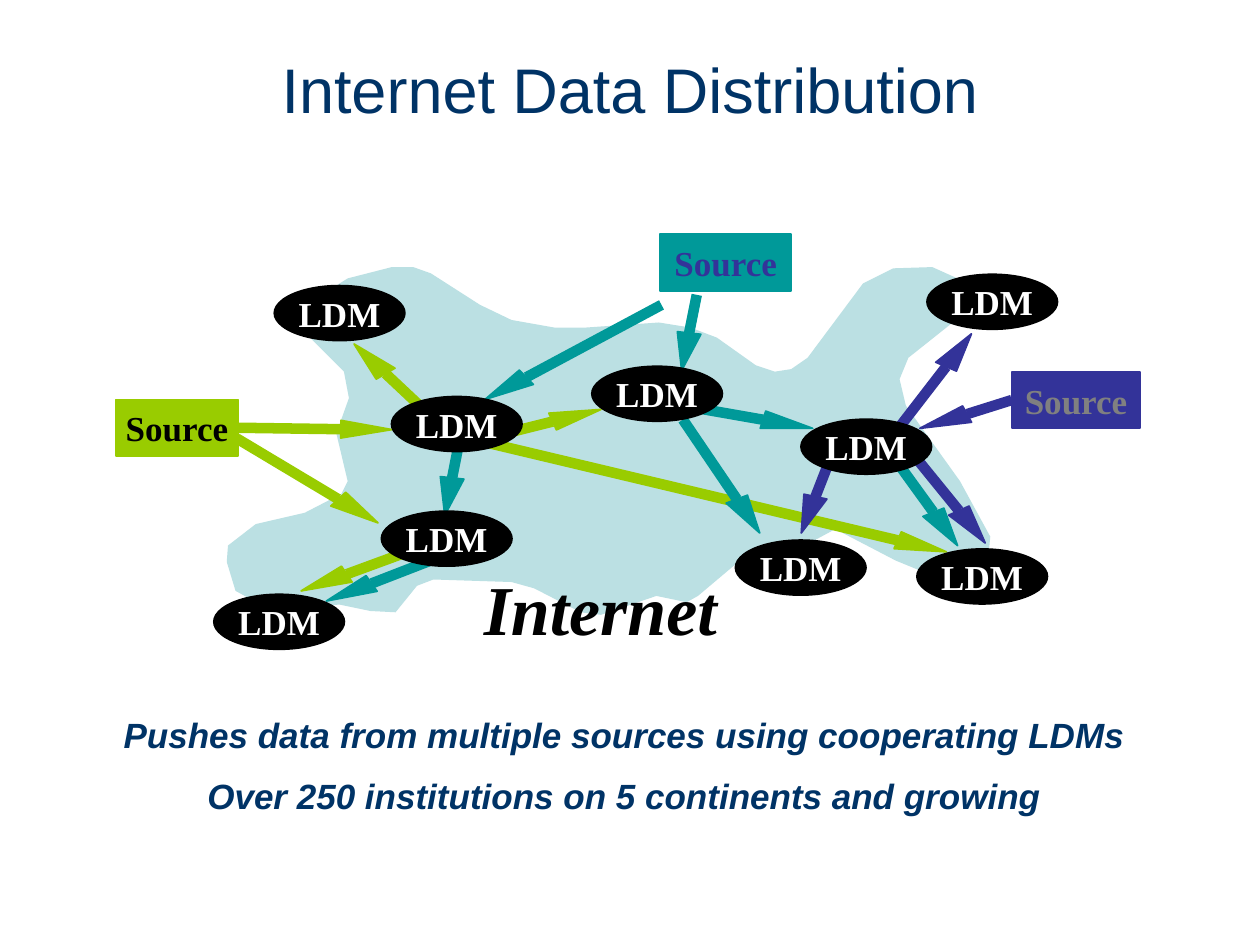
import math

import pptx
import pptx.dml.color
import pptx.enum.shapes
import pptx.enum.text
import pptx.oxml
import pptx.util

Inches = pptx.util.Inches
Pt = pptx.util.Pt
SERIF, SANS = "Times New Roman", "Arial"
COLORS = {
    "navy": "003366", "cloud": "BBE0E3", "green": "99CC00", "teal": "009999",
    "purple": "333399", "gray": "808080", "black": "000000", "white": "FFFFFF",
}

TITLE = "Internet Data Distribution"
CLAIMS = [
    "Pushes data from multiple sources using cooperating LDMs",
    "Over 250 institutions on 5 continents and growing",
]

CLOUD = [
    (1.8, 4.46), (1.81, 4.33), (2.03, 4.16), (2.42, 4.07), (2.71, 3.92), (2.76, 3.82),
    (2.67, 3.44), (2.77, 3.16), (2.73, 2.95), (2.46, 2.68), (2.52, 2.36), (2.76, 2.21),
    (3.11, 2.12), (3.28, 2.12), (3.42, 2.17), (3.81, 2.42), (4.06, 2.54), (4.4, 2.6),
    (4.65, 2.6), (5.23, 2.56), (5.48, 2.6), (5.69, 2.68), (6, 2.9), (6.15, 2.95),
    (6.28, 2.93), (6.41, 2.84), (6.85, 2.25), (7.09, 2.13), (7.4, 2.12), (7.71, 2.26),
    (7.55, 2.57), (7.21, 2.84), (7.14, 3.01), (7.19, 3.22), (7.62, 3.82), (7.86, 4.26),
    (7.83, 4.57), (7.55, 4.63), (7.11, 4.45), (6.63, 4.2), (6.37, 4.34), (5.92, 4.41),
    (5.54, 4.73), (5.45, 4.78), (5.21, 4.73), (4.77, 4.88), (4.61, 4.86), (4.24, 4.67),
    (4.06, 4.62), (3.44, 4.6), (3.31, 4.65), (3.14, 4.86), (2.94, 4.85), (2.7, 4.8),
    (2.09, 4.81), (1.87, 4.69),
]

# fill: (left, top, width, text colour)
SOURCES = {
    "green": (0.92, 3.17, 0.97, "black"),
    "purple": (8.03, 2.95, 1.02, "gray"),
    "teal": (5.24, 1.86, 1.04, "purple"),
}
LDMS = [
    (2.17, 2.26), (6.35, 3.32), (3.1, 3.14), (3.02, 4.05), (4.69, 2.9),
    (7.27, 4.35), (7.35, 2.17), (1.69, 4.71), (5.83, 4.28),
]
NODE_HEIGHT, LDM_WIDTH = 0.45, 1.05

# start, tip; a start on a source's side names the connection site as well
LEFT_SIDE, RIGHT_SIDE = 1, 3
FEEDS = {
    "green": [
        ((1.89, 3.4), (3.11, 3.41), RIGHT_SIDE),
        ((1.88, 3.48), (3, 4.15)),
        ((3.48, 3.36), (2.81, 2.73)),
        ((3.37, 4.33), (2.39, 4.69)),
        ((3.85, 3.51), (7.51, 4.38)),
        ((3.85, 3.48), (4.77, 3.25)),
    ],
    "teal": [
        ((5.25, 2.42), (3.85, 3.17)),
        ((3.65, 3.48), (3.53, 4.09)),
        ((3.57, 4.39), (2.59, 4.77)),
        ((5.53, 2.34), (5.41, 2.94)),
        ((5.42, 3.33), (6.03, 4.23)),
        ((5.42, 3.22), (6.45, 3.4)),
        ((7.1, 3.64), (7.6, 4.33)),
    ],
    "purple": [
        ((8.03, 3.18), (7.3, 3.4), LEFT_SIDE),
        ((6.59, 3.64), (6.36, 4.23)),
        ((7.1, 3.44), (7.71, 2.65)),
        ((7.21, 3.56), (7.82, 4.31)),
    ],
}
HEAD_LENGTH, HEAD_HALF_WIDTH, STRETCH = 0.3, 0.07, 1.35


def rgb(name):
    return pptx.dml.color.RGBColor.from_string(COLORS[name])


def paint(shape, fill, outlined):
    shape.shadow.inherit = False
    shape.fill.solid()
    shape.fill.fore_color.rgb = rgb(fill)
    if outlined:
        shape.line.color.rgb = rgb(fill)
        shape.line.width = Pt(1)
    else:
        shape.line.fill.background()


def write(frame, lines, size, color, face, bold=True, italic=False):
    for index, line in enumerate(lines):
        paragraph = frame.add_paragraph() if index else frame.paragraphs[0]
        paragraph.text = line
        paragraph.alignment = pptx.enum.text.PP_ALIGN.CENTER
        if index:
            paragraph.space_before = Pt(11)
        font = paragraph.font
        font.size, font.name, font.bold, font.italic = Pt(size), face, bold, italic
        font.color.rgb = rgb(color)


def add_polygon(shapes, points, fill, outlined):
    corners = [(Inches(x), Inches(y)) for x, y in points]
    builder = shapes.build_freeform(*corners[0])
    builder.add_line_segments(corners[1:], close=True)
    paint(builder.convert_to_shape(), fill, outlined)


def add_node(shapes, kind, box, label, fill, color, outlined):
    node = shapes.add_shape(kind, *map(Inches, box))
    paint(node, fill, outlined)
    node.text_frame.word_wrap = False
    node.text_frame.vertical_anchor = pptx.enum.text.MSO_ANCHOR.MIDDLE
    write(node.text_frame, [label], 20, color, SERIF)
    return node


def head_geometry(start, tip):
    """Return the base centre and two wings of a head stretched sideways."""
    dx, dy = (start[0] - tip[0]) / STRETCH, start[1] - tip[1]
    length = math.hypot(dx, dy)
    ux, uy = dx / length, dy / length
    base = (tip[0] + HEAD_LENGTH * ux * STRETCH, tip[1] + HEAD_LENGTH * uy)
    wings = [(base[0] - half * uy * STRETCH, base[1] + half * ux)
             for half in (HEAD_HALF_WIDTH, -HEAD_HALF_WIDTH)]
    return base, wings


def add_feed(shapes, color, source, start, tip, side=None):
    group = shapes.add_group_shape().shapes
    base, wings = head_geometry(start, tip)
    shaft = group.add_connector(
        pptx.enum.shapes.MSO_CONNECTOR.STRAIGHT, *map(Inches, (*start, *base)))
    if side is not None:
        shaft.begin_connect(source, side)
    shaft.line.color.rgb = rgb(color)
    shaft.line.width = Pt(6)
    shaft._element.spPr.append(pptx.oxml.parse_xml(
        '<a:effectLst xmlns:a="http://schemas.openxmlformats.org/drawingml/2006/main"/>'))
    add_polygon(group, [tip, *wings], color, True)


def add_text(shapes, box, lines, size, color, face):
    frame = shapes.add_textbox(*map(Inches, box)).text_frame
    frame.word_wrap = True
    write(frame, lines, size, color, face, italic=True)


def main():
    deck = pptx.Presentation()
    deck.slide_width, deck.slide_height = Inches(10), Inches(7.5)
    slide = deck.slides.add_slide(deck.slide_layouts[5])
    shapes = slide.shapes
    kinds = pptx.enum.shapes.MSO_SHAPE

    title = shapes.title
    title.left, title.top, title.width, title.height = map(Inches, (0.75, 0.08, 8.5, 1.25))
    title.text_frame.vertical_anchor = pptx.enum.text.MSO_ANCHOR.MIDDLE
    write(title.text_frame, [TITLE], 36, "navy", SANS, bold=False)

    add_polygon(shapes, CLOUD, "cloud", False)
    sources = {
        fill: add_node(shapes, kinds.RECTANGLE, (left, top, width, NODE_HEIGHT),
                       "Source", fill, color, True)
        for fill, (left, top, width, color) in SOURCES.items()
    }
    for color, feeds in FEEDS.items():
        for feed in feeds:
            add_feed(shapes, color, sources[color], *feed)
    add_text(shapes, (3.6, 4.44, 2.33, 0.76), ["Internet"], 40, "black", SERIF)
    for left, top in LDMS:
        add_node(shapes, kinds.OVAL, (left, top, LDM_WIDTH, NODE_HEIGHT),
                 "LDM", "black", "white", False)
    add_text(shapes, (0.49, 5.61, 8.93, 0.93), CLAIMS, 20, "navy", SANS)
    deck.save("out.pptx")


if __name__ == "__main__":
    main()
